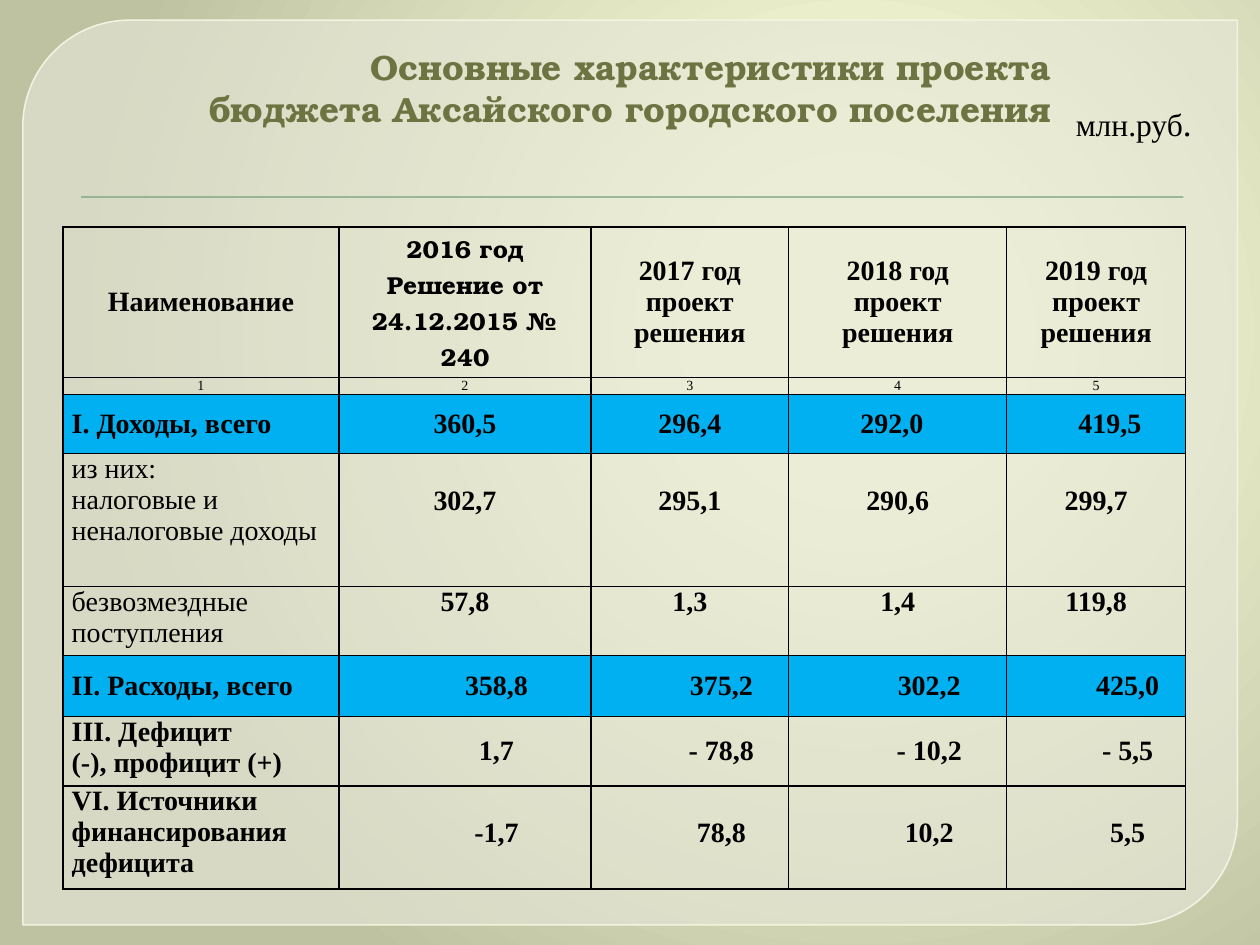
import pptx
import pptx.dml.color
import pptx.enum.shapes
import pptx.enum.text
import pptx.oxml
import pptx.oxml.ns
import pptx.util

Pt = pptx.util.Pt
ALIGN = pptx.enum.text.PP_ALIGN
ANCHOR = pptx.enum.text.MSO_ANCHOR
SHAPE = pptx.enum.shapes.MSO_SHAPE
NAMESPACE = pptx.oxml.ns.nsdecls("a")

# Content
TITLE = "Основные характеристики проекта\vбюджета Аксайского городского поселения"
UNIT = ("млн.руб", ".")
HEADER = ["Наименование", "2016 год\nРешение от 24.12.2015 №\v240",
          "2017 год\nпроект\vрешения", "2018 год\nпроект\vрешения", "2019 год\nпроект\vрешения"]
ROWS = [
    HEADER,
    ["1", "2", "3", "4", "5"],
    ["I. Доходы, всего", "360,5", "296,4", "292,0", "419,5"],
    ["из них:\nналоговые и неналоговые доходы", "302,7", "295,1", "290,6", "299,7"],
    ["безвозмездные поступления", "57,8", "1,3", "1,4", "119,8"],
    ["II. Расходы, всего", "358,8", "375,2", "302,2", "425,0"],
    ["III. Дефицит\n(-), профицит (+)", "1,7", "- 78,8", "- 10,2", "- 5,5"],
    ["VI. Источники финансирования дефицита", "-1,7", "78,8", "10,2", "5,5"],
]

# Table layout and style, by row number
COLUMN_WIDTHS = [157.7, 144, 113, 124.6, 102.2]
ROW_HEIGHTS = [86, 9.7, 33.7, 76, 39.4, 34.9, 39.7, 59]
NUMBER_ROW = 1
TOTAL_ROWS = {2, 5}
PLAIN_LABEL_ROWS = {3, 4}
INDENTED_ROWS = {5, 6, 7}
LEFT_INDENTED_CELLS = {(2, 3), (2, 4)}
SECOND_LINE_ROWS = {3, 7}
TOP_LABEL_ROWS = {3, 4, 6, 7}
TOP_VALUE_ROWS = {3, 4, 7}
INDENT = 36

SERIF, DISPLAY = "Times New Roman", "TeX Gyre Bonum"
BLACK, OLIVE, BLUE, GREEN = "000000", "6D7442", "00B0F0", "72A376"
PANEL, PANEL_EDGE = "E5E6D7", "F2F4E2"
BACKGROUND_STOPS = [(0, "FBFED9"), (20, "F9FCD8"), (100, "BFC2A1")]


def color(value):
    return pptx.dml.color.RGBColor.from_string(value)


def style_run(run, size, font=SERIF, fill=BLACK, bold=False):
    run.font.size = Pt(size)
    run.font.name = font
    run.font.bold = bold
    run.font.color.rgb = color(fill)


def set_alpha(fill_parent, percent):
    for node in fill_parent.findall("a:solidFill/a:srgbClr", fill_parent.nsmap):
        node.append(pptx.oxml.parse_xml(f'<a:alpha {NAMESPACE} val="{percent * 1000}"/>'))


def add_panel_shape(slide, kind, left, top, width, height, fill):
    shape = slide.shapes.add_shape(kind, Pt(left), Pt(top), Pt(width), Pt(height))
    shape.shadow.inherit = False
    shape.fill.solid()
    shape.fill.fore_color.rgb = color(fill)
    shape.line.fill.background()
    return shape


def add_text_box(slide, left, top, width, height):
    shape = slide.shapes.add_textbox(Pt(left), Pt(top), Pt(width), Pt(height))
    shape.text_frame.word_wrap = True
    return shape.text_frame


def set_background(slide):
    slide.background.fill.gradient()
    gradient = slide.element.find(".//" + pptx.oxml.ns.qn("a:gradFill"))
    stops = "".join(f'<a:gs pos="{place * 1000}"><a:srgbClr val="{value}"/></a:gs>'
                    for place, value in BACKGROUND_STOPS)
    new_gradient = pptx.oxml.parse_xml(
        f'<a:gradFill {NAMESPACE} rotWithShape="1"><a:gsLst>{stops}</a:gsLst>'
        '<a:path path="circle"><a:fillToRect l="68000" t="35000" r="32000" b="65000"/>'
        '</a:path></a:gradFill>')
    gradient.getparent().replace(gradient, new_gradient)


def add_borders(cell):
    properties = cell._tc.get_or_add_tcPr()
    for position, side in enumerate(("lnL", "lnR", "lnT", "lnB")):
        properties.insert(position, pptx.oxml.parse_xml(
            f'<a:{side} {NAMESPACE} w="12700"><a:solidFill><a:srgbClr val="{BLACK}"/>'
            f'</a:solidFill></a:{side}>'))


def fill_cell(cell, row, column, text):
    is_label = column == 0
    is_value = not is_label and row > NUMBER_ROW
    side_margin = 5 if row > NUMBER_ROW else 3.6
    cell.margin_left = cell.margin_right = Pt(side_margin)
    cell.margin_bottom = Pt(0)
    cell.margin_top = Pt(18.4 if is_value and row in SECOND_LINE_ROWS else 0)
    top_rows = TOP_LABEL_ROWS if is_label else TOP_VALUE_ROWS
    cell.vertical_anchor = ANCHOR.TOP if row in top_rows else ANCHOR.MIDDLE
    if row in TOTAL_ROWS:
        cell.fill.solid()
        cell.fill.fore_color.rgb = color(BLUE)
    else:
        cell.fill.background()
    add_borders(cell)

    is_display = (row, column) == (0, 1)
    left_indented = (row, column) in LEFT_INDENTED_CELLS
    left_aligned = left_indented or (is_label and row > NUMBER_ROW)
    bold = row != NUMBER_ROW and not (is_label and row in PLAIN_LABEL_ROWS)
    size = 8 if row == NUMBER_ROW else 14 if is_display else 16
    cell.text_frame.text = text
    for paragraph in cell.text_frame.paragraphs:
        paragraph.alignment = ALIGN.LEFT if left_aligned else ALIGN.CENTER
        if left_indented or (is_value and row in INDENTED_ROWS):
            paragraph._p.get_or_add_pPr().set("indent", str(Pt(INDENT)))
        if is_display:
            paragraph.line_spacing = Pt(20.5)
        for run in paragraph.runs:
            style_run(run, size, DISPLAY if is_display else SERIF, bold=bold)


def add_budget_table(slide):
    frame = slide.shapes.add_table(len(ROWS), len(HEADER), Pt(36), Pt(129.7),
                                   Pt(sum(COLUMN_WIDTHS)), Pt(sum(ROW_HEIGHTS)))
    table = frame.table
    table.first_row = table.horz_banding = False
    for column, width in zip(table.columns, COLUMN_WIDTHS):
        column.width = Pt(width)
    for row, height in zip(table.rows, ROW_HEIGHTS):
        row.height = Pt(height)
    for row, texts in enumerate(ROWS):
        for column, text in enumerate(texts):
            fill_cell(table.cell(row, column), row, column, text)


def main():
    presentation = pptx.Presentation()
    presentation.slide_width, presentation.slide_height = Pt(720), Pt(540)
    slide = presentation.slides.add_slide(presentation.slide_layouts[6])
    set_background(slide)

    # Translucent panel and rule under the title
    panel = add_panel_shape(slide, SHAPE.ROUND_2_DIAG_RECTANGLE, 13, 11.5, 694, 517, PANEL)
    panel.adjustments[0], panel.adjustments[1] = 0.118, 0
    panel.line.color.rgb = color(PANEL_EDGE)
    panel.line.width = Pt(0.87)
    set_alpha(panel._element.spPr, 65)
    add_panel_shape(slide, SHAPE.RECTANGLE, 46.3, 112.2, 630, 0.7, GREEN)

    # Title
    title = add_text_box(slide, 84.2, 15.1, 523.5, 62.6)
    title.vertical_anchor = ANCHOR.BOTTOM
    title.text = TITLE
    paragraph = title.paragraphs[0]
    paragraph.alignment = ALIGN.RIGHT
    paragraph.line_spacing = Pt(24)
    for run in paragraph.runs:
        style_run(run, 20, DISPLAY, OLIVE, True)

    # Unit of measure
    unit = add_text_box(slide, 607.7, 54.7, 112.3, 31.7)
    for text, size in zip(UNIT, (18, 20)):
        run = unit.paragraphs[0].add_run()
        run.text = text
        style_run(run, size)

    add_budget_table(slide)
    presentation.save("out.pptx")


if __name__ == "__main__":
    main()
